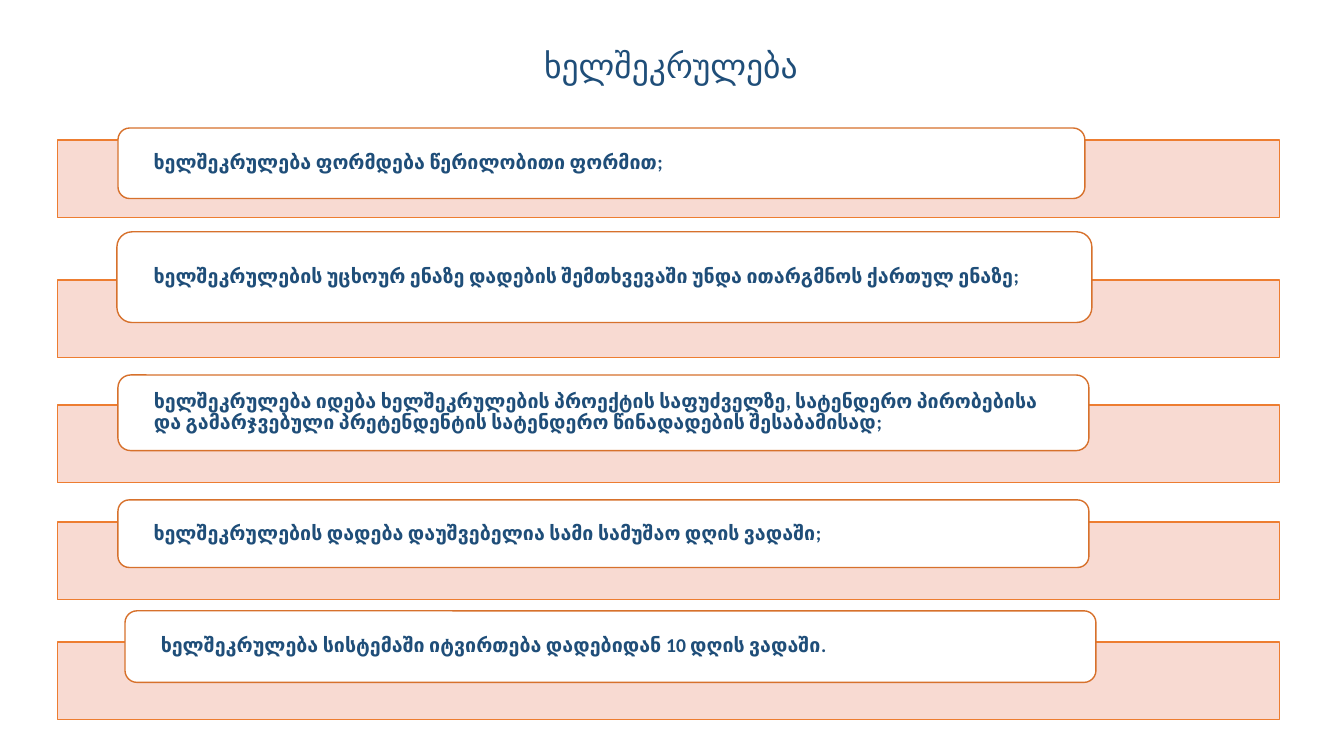
from dataclasses import dataclass

import pptx
import pptx.dml.color
import pptx.enum.shapes
import pptx.enum.text
import pptx.oxml.ns
import pptx.util
from lxml import etree
from pptx.util import Inches


@dataclass(frozen=True)
class Theme:
    font: str = "Calibri"
    text: str = "1F4E79"
    band_fill: str = "F8D7CE"
    band_line: str = "ED7D31"
    card_fill: str = "FFFFFF"
    card_line: str = "D7712C"
    title_size: int = 24
    card_size: int = 14
    line_width: int = 1


THEME = Theme()
SHAPE = pptx.enum.shapes.MSO_SHAPE
BAND_LEFT, BAND_WIDTH, BAND_HEIGHT = 0.57, 12.12, 0.77

# Band top, card (left, top, width, height), card text
RULES = [
    (1.39, (1.17, 1.27, 9.59, 0.7), "ხელშეკრულება ფორმდება წერილობითი ფორმით;"),
    (2.78, (1.16, 2.3, 9.67, 0.9),
     "ხელშეკრულების უცხოურ ენაზე დადების შემთხვევაში უნდა ითარგმნოს ქართულ ენაზე;"),
    (4.02, (1.17, 3.72, 9.63, 0.75),
     "ხელშეკრულება იდება ხელშეკრულების პროექტის საფუძველზე, სატენდერო პირობებისა "
     "და გამარჯვებული პრეტენდენტის სატენდერო წინადადების შესაბამისად;"),
    (5.18, (1.17, 4.96, 9.63, 0.67),
     "ხელშეკრულების დადება დაუშვებელია სამი სამუშაო დღის ვადაში;"),
    (6.37, (1.24, 6.06, 9.63, 0.71),
     "ხელშეკრულება სისტემაში იტვირთება დადებიდან 10 დღის ვადაში."),
]


def rgb(value):
    return pptx.dml.color.RGBColor.from_string(value)


def write_text(shape, text, size, alignment, bold=False):
    shape.text_frame.word_wrap = True
    paragraph = shape.text_frame.paragraphs[0]
    paragraph.text = text
    paragraph.alignment = alignment
    paragraph.font.name = THEME.font
    paragraph.font.size = pptx.util.Pt(size)
    paragraph.font.bold = bold
    paragraph.font.color.rgb = rgb(THEME.text)
    return paragraph


def add_title(slide, text):
    title = slide.shapes.add_textbox(Inches(0.95), Inches(0.4), Inches(11.41), Inches(0.5))
    write_text(title, text, THEME.title_size, pptx.enum.text.PP_ALIGN.CENTER)
    title.text_frame.auto_size = pptx.enum.text.MSO_AUTO_SIZE.SHAPE_TO_FIT_TEXT


def add_panel(slide, kind, bounds, fill, line):
    """Add a filled, outlined shape; bounds are left, top, width, height in inches."""
    shape = slide.shapes.add_shape(kind, *map(Inches, bounds))
    shape.shadow.inherit = False
    shape.fill.solid()
    shape.fill.fore_color.rgb = rgb(fill)
    shape.line.color.rgb = rgb(line)
    shape.line.width = pptx.util.Pt(THEME.line_width)
    return shape


def set_opacity(shape, percent):
    qn = pptx.oxml.ns.qn
    color = shape.fill._xPr.find(qn("a:solidFill")).find(qn("a:srgbClr"))
    etree.SubElement(color, qn("a:alpha")).set("val", str(percent * 1000))


def add_band(slide, top):
    bounds = (BAND_LEFT, top, BAND_WIDTH, BAND_HEIGHT)
    band = add_panel(slide, SHAPE.RECTANGLE, bounds, THEME.band_fill, THEME.band_line)
    set_opacity(band, 90)


def add_card(slide, bounds, text):
    card = add_panel(slide, SHAPE.ROUNDED_RECTANGLE, bounds, THEME.card_fill, THEME.card_line)
    frame = card.text_frame
    frame.margin_left = frame.margin_right = Inches(0.32)
    frame.margin_top = frame.margin_bottom = 0
    frame.vertical_anchor = pptx.enum.text.MSO_ANCHOR.MIDDLE
    paragraph = write_text(card, text, THEME.card_size, pptx.enum.text.PP_ALIGN.LEFT, bold=True)
    paragraph.line_spacing = 0.9


def main():
    presentation = pptx.Presentation()
    presentation.slide_width = Inches(13.33)
    presentation.slide_height = Inches(7.5)
    slide = presentation.slides.add_slide(presentation.slide_layouts[6])
    add_title(slide, "ხელშეკრულება")
    for band_top, card_bounds, text in RULES:
        add_band(slide, band_top)
        add_card(slide, card_bounds, text)
    presentation.save("out.pptx")


if __name__ == "__main__":
    main()
